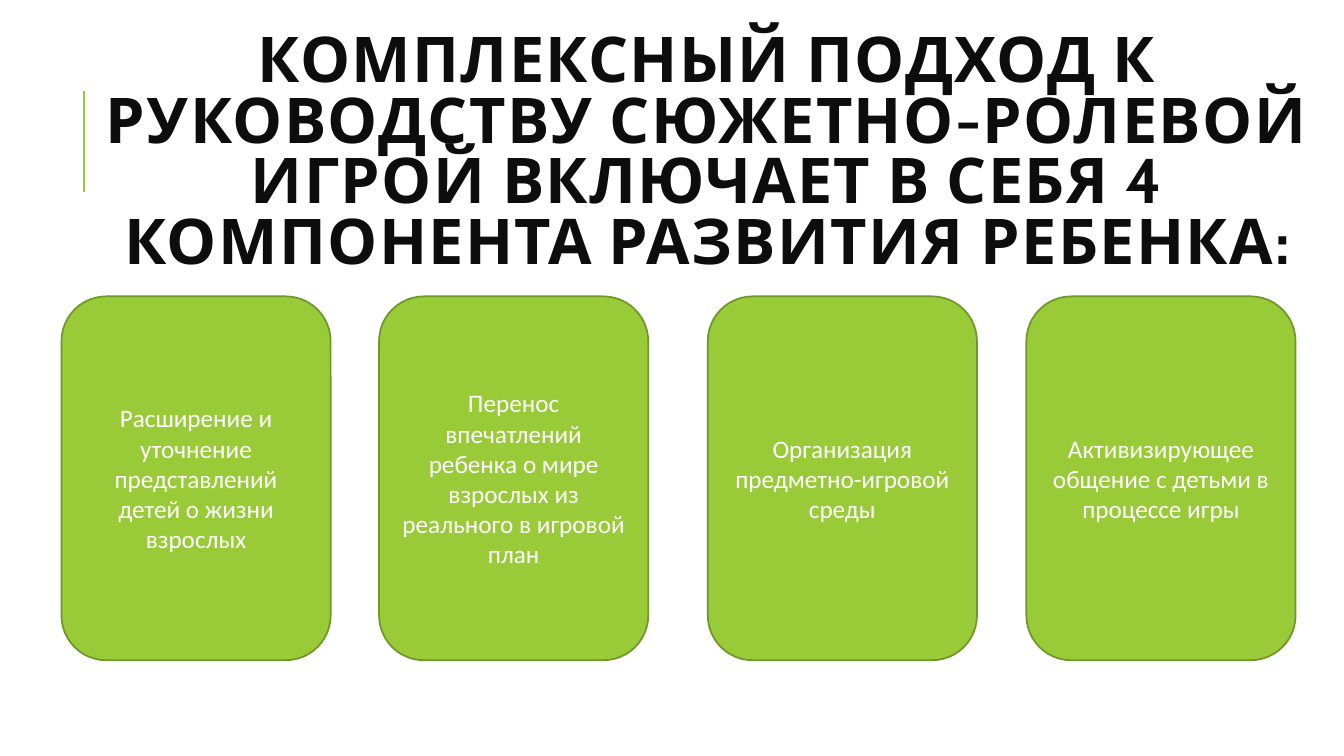
from lxml import etree
from pptx import Presentation
from pptx.dml.color import RGBColor
from pptx.enum.shapes import MSO_CONNECTOR, MSO_SHAPE
from pptx.enum.text import MSO_ANCHOR, PP_ALIGN
from pptx.oxml.ns import qn
from pptx.util import Inches, Pt

ROUNDED = MSO_SHAPE.ROUNDED_RECTANGLE
STRAIGHT = MSO_CONNECTOR.STRAIGHT
MIDDLE = MSO_ANCHOR.MIDDLE
CENTER = PP_ALIGN.CENTER

GREEN = RGBColor(0x99, 0xCB, 0x38)
DARK_GREEN = RGBColor(0x71, 0x96, 0x29)
WHITE = RGBColor(0xFF, 0xFF, 0xFF)
INK = RGBColor(0x0D, 0x0D, 0x0D)

TITLE_FONT = {"name": "Cabin", "size": Pt(45), "bold": True}
CARD_FONT = {"name": "Calibri", "size": Pt(18)}

TITLE = ("КОМПЛЕКСНЫЙ ПОДХОД К РУКОВОДСТВУ СЮЖЕТНО-РОЛЕВОЙ ИГРОЙ "
         "ВКЛЮЧАЕТ В СЕБЯ 4 КОМПОНЕНТА РАЗВИТИЯ РЕБЕНКА:")
CARDS = [
    (0.61, "Расширение и уточнение представлений детей о жизни взрослых"),
    (3.76, "Перенос впечатлений ребенка о мире взрослых из реального "
           "в игровой план"),
    (7.02, "Организация предметно-игровой среды"),
    (10.18, "Активизирующее общение с детьми в процессе игры"),
]


def write_text(shape, text, font, color):
    tf = shape.text_frame
    tf.word_wrap = True
    tf.vertical_anchor = MIDDLE
    p = tf.paragraphs[0]
    p.alignment = CENTER
    r = p.add_run()
    r.text = text
    for name, value in font.items():
        setattr(r.font, name, value)
    r.font.color.rgb = color
    return p, r


def add_title(s, left, top, width, height):
    rule = s.shapes.add_connector(
        STRAIGHT, Inches(left), Inches(top + 1.47),
        Inches(left), Inches(top + 0.47))
    rule.line.color.rgb = GREEN
    rule.line.width = Pt(1.5)
    etree.SubElement(rule._element.spPr, qn("a:effectLst"))

    box = s.shapes.add_textbox(
        Inches(left), Inches(top), Inches(width), Inches(height))
    p, r = write_text(box, TITLE, TITLE_FONT, INK)
    p.line_spacing = 0.8
    r.font._element.set("spc", "100")


def add_card(s, left, top, width, height, text):
    card = s.shapes.add_shape(
        ROUNDED, Inches(left), Inches(top), Inches(width), Inches(height))
    card.shadow.inherit = False
    card.fill.solid()
    card.fill.fore_color.rgb = GREEN
    card.line.color.rgb = DARK_GREEN
    card.line.width = Pt(1.25)
    write_text(card, text, CARD_FONT, WHITE)


def main():
    prs = Presentation()
    prs.slide_width = Inches(13.33)
    prs.slide_height = Inches(7.5)
    s = prs.slides.add_slide(prs.slide_layouts[6])
    add_title(s, 0.83, 0.43, 12.37, 2.22)
    for left, text in CARDS:
        add_card(s, left, 2.94, 2.67, 3.61, text)
    prs.save("out.pptx")


if __name__ == "__main__":
    main()
